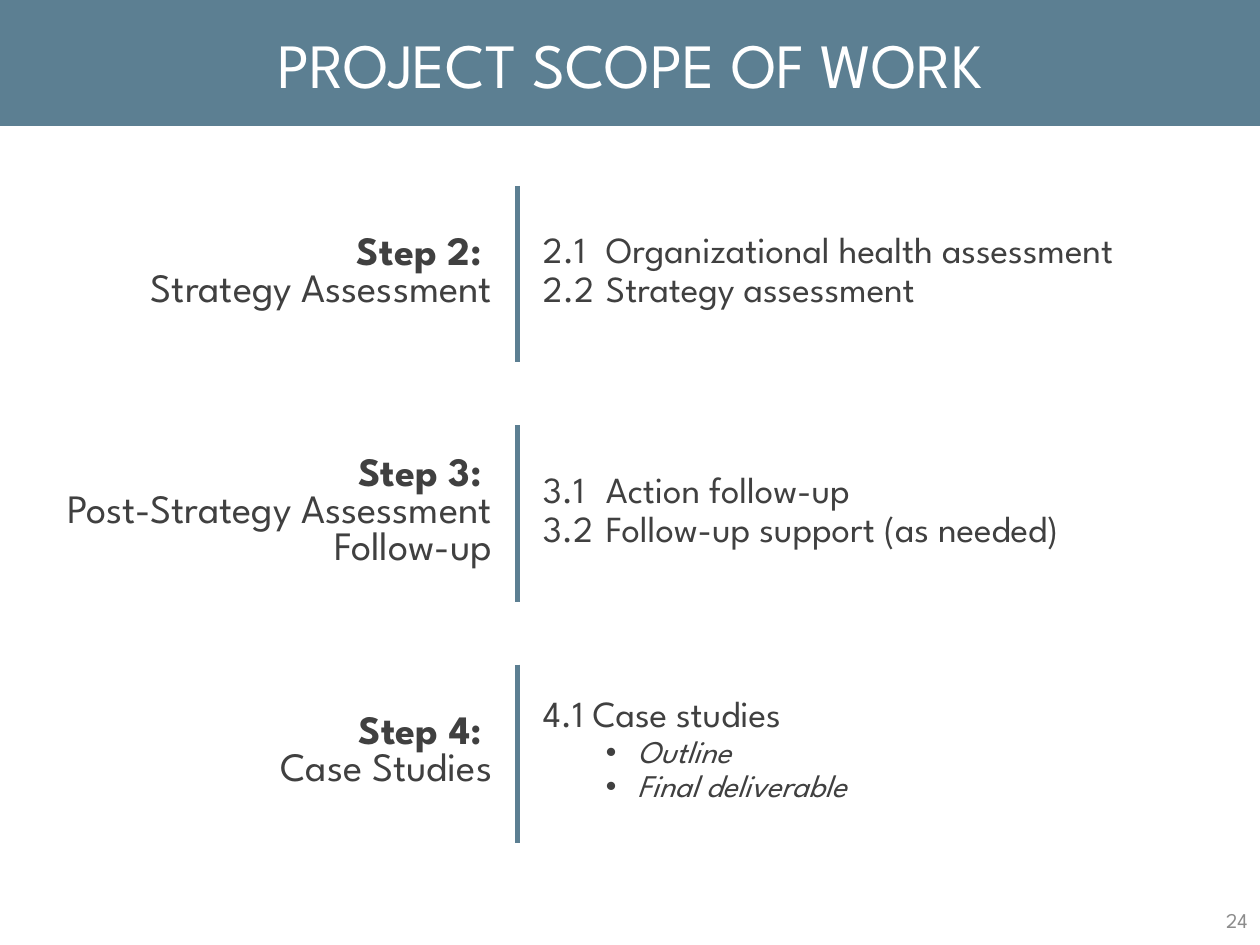
"""Build the project scope of work slide."""
from dataclasses import dataclass

from pptx import Presentation
from pptx.dml.color import RGBColor
from pptx.enum.text import MSO_ANCHOR, PP_ALIGN
from pptx.oxml.xmlchemy import OxmlElement
from pptx.util import Pt

MIDDLE = MSO_ANCHOR.MIDDLE
LEFT, CENTER, RIGHT = PP_ALIGN.LEFT, PP_ALIGN.CENTER, PP_ALIGN.RIGHT
TITLE_ONLY = 5


@dataclass(frozen=True)
class Theme:
    """Colours, font and type sizes of the slide."""
    font: str = "League Spartan"
    accent: str = "5C7F92"
    ink: str = "404040"
    paper: str = "FFFFFF"
    muted: str = "8C8C8C"
    title: float = 36
    step: float = 23
    task: float = 21
    detail: float = 18
    number: float = 12


THEME = Theme()
STEPS = [
    ("Step 2: ", "Strategy Assessment",
     ["2.1\tOrganizational health assessment", "2.2\tStrategy assessment"], []),
    ("Step 3: ", "Post-Strategy Assessment Follow-up",
     ["3.1\tAction follow-up", "3.2\tFollow-up support (as needed)"], []),
    ("Step 4: ", "Case Studies",
     ["4.1 Case studies"], ["Outline", "Final deliverable"]),
]
STEP_HEIGHT, GAP_HEIGHT = 100.8, 36
COLUMN_WIDTHS = (271.4, 398.2)


def apply_format(target, values):
    """Set each attribute of target from a dict."""
    for name, value in values.items():
        setattr(target, name, value)


def write_line(paragraph, text, size, color=THEME.ink, align=LEFT, **style):
    """Put one styled run into a paragraph."""
    paragraph.alignment = align
    run = paragraph.add_run()
    run.text = text
    apply_format(run.font, {"name": THEME.font, "size": Pt(size), **style})
    run.font.color.rgb = RGBColor.from_string(color)


def next_paragraph(frame):
    """Return the unused first paragraph or a new one."""
    first = frame.paragraphs[0]
    return frame.add_paragraph() if first.runs else first


def write_item(frame, text, size, margin, hanging, bullet=None, **style):
    """Add one hanging line, with a bullet where one is given."""
    paragraph = next_paragraph(frame)
    write_line(paragraph, text, size, **style)
    paragraph.space_after = Pt(3)
    properties = paragraph._p.get_or_add_pPr()
    properties.set("marL", str(Pt(margin)))
    properties.set("indent", str(Pt(-hanging)))
    if bullet:
        paragraph.level = 1
        mark = OxmlElement("a:buChar")
        mark.set("char", bullet)
        properties.append(mark)


def add_border(cell, side):
    """Draw an accent rule on one side of a cell."""
    rule = OxmlElement(f"a:{side}")
    rule.set("w", str(Pt(3)))
    fill = OxmlElement("a:solidFill")
    color = OxmlElement("a:srgbClr")
    color.set("val", THEME.accent)
    fill.append(color)
    rule.append(fill)
    cell._tc.get_or_add_tcPr().insert(0, rule)


def fill_step(cell, label, name):
    """Write the step label and its name."""
    apply_format(cell, {"vertical_anchor": MIDDLE, "margin_left": Pt(7.2),
                        "margin_right": Pt(14.4), "margin_top": 0, "margin_bottom": 0})
    for text, bold in ((label, True), (name, False)):
        write_line(next_paragraph(cell.text_frame), text, THEME.step, align=RIGHT, bold=bold)
    add_border(cell, "lnR")


def fill_tasks(cell, tasks, details):
    """Write the numbered tasks and their bulleted details."""
    apply_format(cell, {"vertical_anchor": MIDDLE, "margin_left": Pt(14.4),
                        "margin_right": Pt(7.2), "margin_top": Pt(7.2),
                        "margin_bottom": Pt(7.2)})
    for task in tasks:
        write_item(cell.text_frame, task, THEME.task, 36, 36)
    for detail in details:
        write_item(cell.text_frame, detail, THEME.detail, 54, 18, "•", italic=True)
    add_border(cell, "lnL")


def add_title(slide, text):
    """Fill the title placeholder as a full-width band."""
    title = slide.shapes.title
    apply_format(title, {"left": 0, "top": 0, "width": Pt(720), "height": Pt(72)})
    title.fill.solid()
    title.fill.fore_color.rgb = RGBColor.from_string(THEME.accent)
    title.text_frame.vertical_anchor = MIDDLE
    write_line(title.text_frame.paragraphs[0], text, THEME.title, THEME.paper, CENTER)


def add_scope_table(slide, steps):
    """Add the table of steps, with an empty row between steps."""
    row_count = 2 * len(steps) - 1
    height = len(steps) * STEP_HEIGHT + (len(steps) - 1) * GAP_HEIGHT
    table = slide.shapes.add_table(row_count, 2, Pt(24.5), Pt(106.6),
                                   Pt(sum(COLUMN_WIDTHS)), Pt(height)).table
    apply_format(table, {"first_row": False, "horz_banding": False})
    for column, width in zip(table.columns, COLUMN_WIDTHS):
        column.width = Pt(width)
    for index, row in enumerate(table.rows):
        row.height = Pt(GAP_HEIGHT if index % 2 else STEP_HEIGHT)
    for cell in table.iter_cells():
        cell.fill.background()
    for index, (label, name, tasks, details) in enumerate(steps):
        fill_step(table.cell(2 * index, 0), label, name)
        fill_tasks(table.cell(2 * index, 1), tasks, details)


def add_page_number(slide, text):
    """Write the page number in the bottom right corner."""
    frame = slide.shapes.add_textbox(Pt(558), Pt(511.2), Pt(162), Pt(28.8)).text_frame
    apply_format(frame, {"word_wrap": True, "vertical_anchor": MIDDLE})
    write_line(frame.paragraphs[0], text, THEME.number, THEME.muted, RIGHT)


def main():
    """Build and save the slide."""
    deck = Presentation()
    apply_format(deck, {"slide_width": Pt(720), "slide_height": Pt(540)})
    slide = deck.slides.add_slide(deck.slide_layouts[TITLE_ONLY])
    add_title(slide, "PROJECT SCOPE OF WORK")
    add_scope_table(slide, STEPS)
    add_page_number(slide, "24")
    deck.save("out.pptx")


if __name__ == "__main__":
    main()
